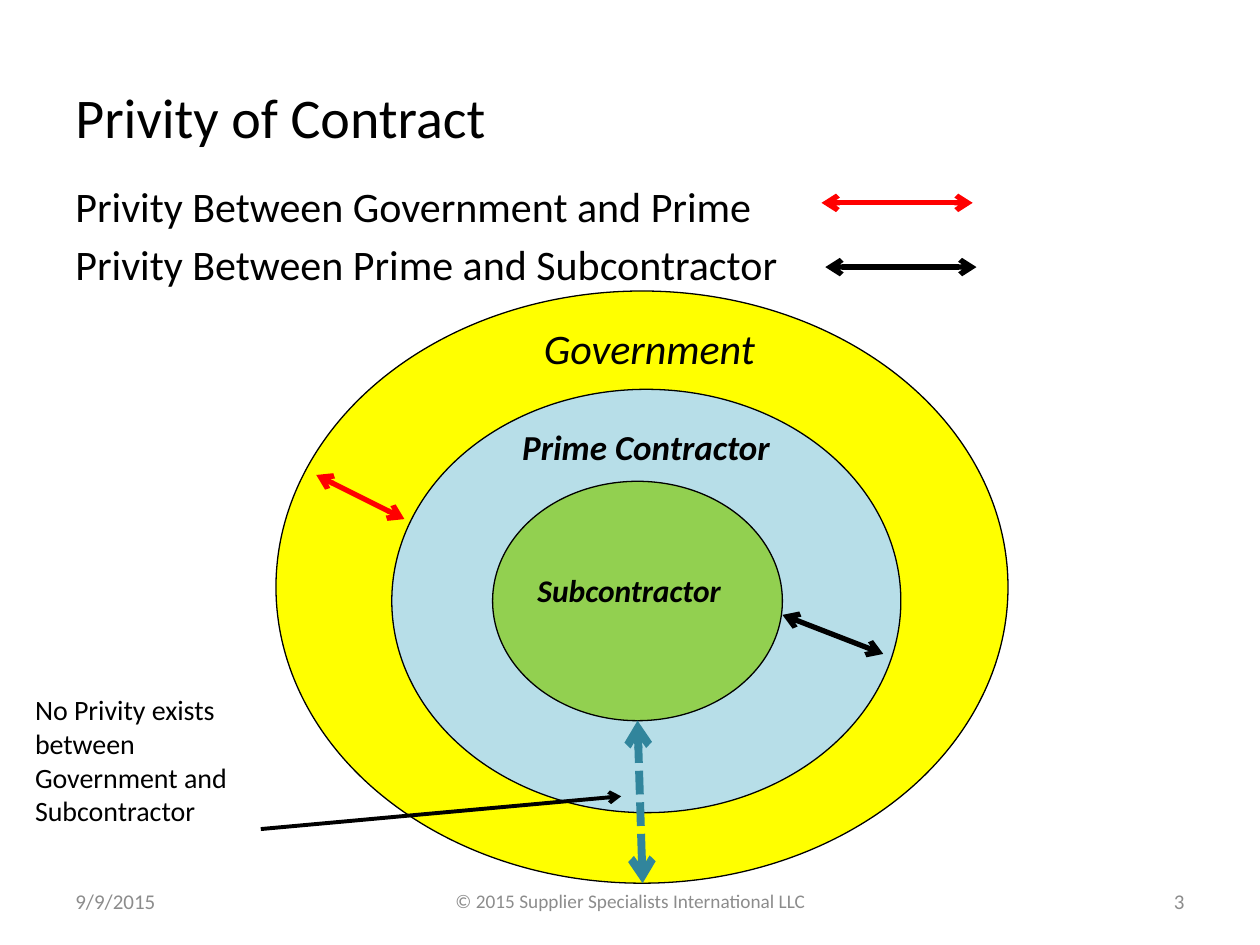
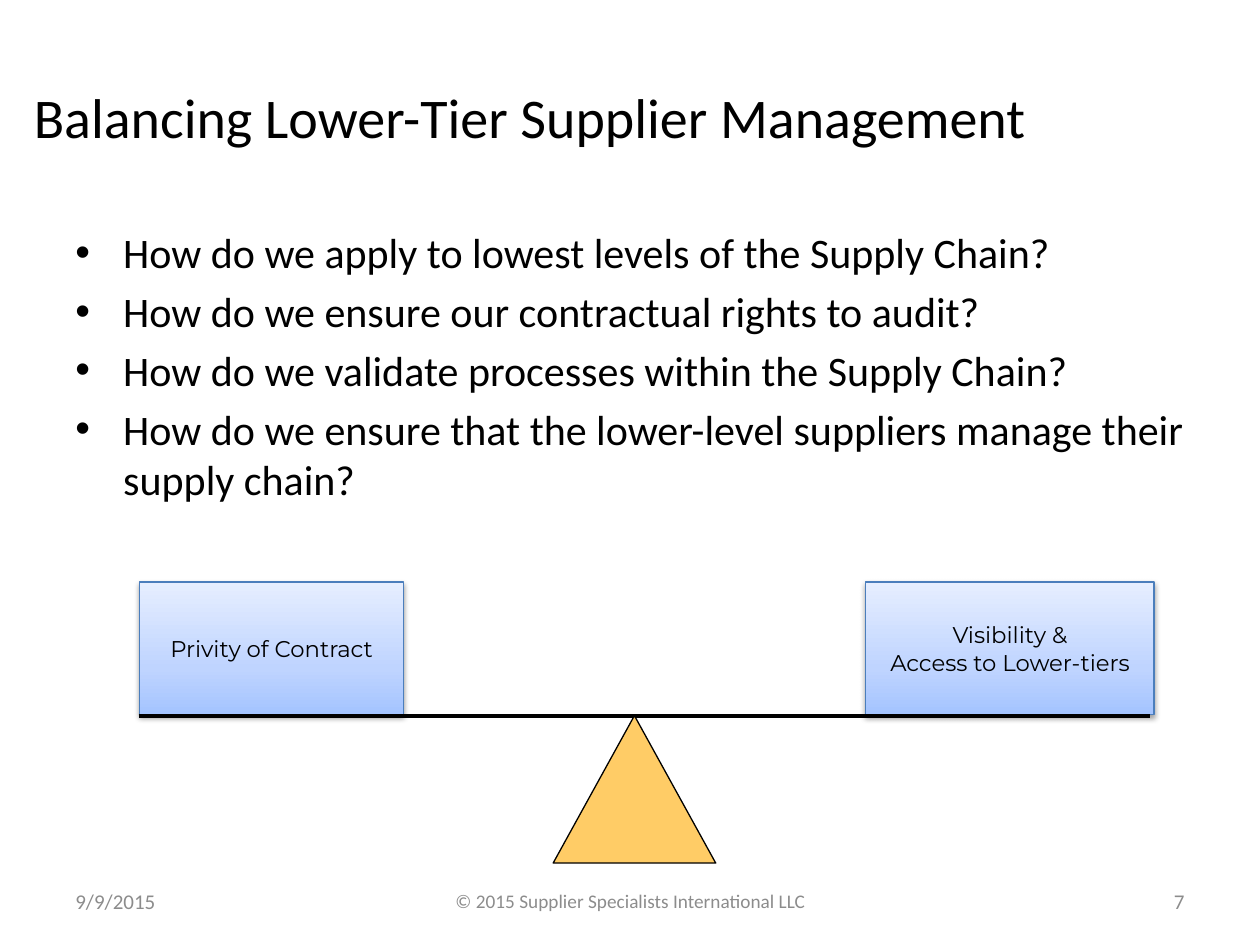
from dataclasses import dataclass

from lxml import etree
from copy import deepcopy
from pptx import Presentation
from pptx.dml.color import RGBColor
from pptx.enum import dml, shapes, text
from pptx.oxml import ns
from pptx.util import Inches, Pt


@dataclass(frozen=True)
class Theme:
    ink: str = "000000"
    muted: str = "8C8C8C"
    government: str = "FFFF00"
    prime: str = "B7DEE8"
    subcontractor: str = "92D050"
    prime_link: str = "FF0000"
    no_link: str = "31859C"
    pivot: str = "FFCC66"
    weight_edge: str = "4B7EBC"
    weight_stops: tuple = ((0, "A4C4FF"), (0.35, "BFD4FF"), (1, "E6EEFF"))
    font: str = "Calibri"
    weight_font: str = "Montserrat"
    title: float = 32
    body: float = 24
    prime_label: float = 20
    sub_label: float = 18
    note: float = 16
    weight: float = 13
    footer: float = 12
    copyright: float = 11
    outline: float = 0.75
    beam: float = 2.25
    arrow: float = 3
    heavy_arrow: float = 4.5


@dataclass(frozen=True)
class Box:
    left: float
    top: float
    width: float
    height: float

    def inner(self, dx, dy, width, height):
        return Box(self.left + dx, self.top + dy, width, height)

    def point(self, dx, dy):
        return self.left + dx, self.top + dy

    def lengths(self):
        return [Inches(v) for v in (self.left, self.top, self.width, self.height)]


THEME = Theme()
ALIGN = text.PP_ALIGN
ANCHOR = text.MSO_ANCHOR
SHAPE = shapes.MSO_SHAPE


def rgb(code):
    return RGBColor.from_string(code)


def add_element(parent, tag, **attributes):
    return etree.SubElement(parent, ns.qn(tag), attributes)


def write(frame, lines, size, color=THEME.ink, font=THEME.font, align=ALIGN.LEFT,
          bold=False, italic=False, gap=0, bullet=False):
    """Fill a text frame with one paragraph per line; gap goes between paragraphs."""
    frame.text = "\n".join(lines)
    for index, para in enumerate(frame.paragraphs):
        para.alignment = align
        para.space_before = Pt(gap if index else 0)
        if bullet:
            properties = para._p.get_or_add_pPr()
            properties.set("marL", str(Inches(0.38)))
            properties.set("indent", str(Inches(-0.38)))
            add_element(properties, "a:buFont", typeface="Arial")
            add_element(properties, "a:buChar", char="•")
        for span in para.runs:
            span.font.name, span.font.size = font, Pt(size)
            span.font.bold, span.font.italic = bold, italic
            span.font.color.rgb = rgb(color)


def add_text(page, box, lines, size, anchor=ANCHOR.TOP, **style):
    frame = page.shapes.add_textbox(*box.lengths()).text_frame
    frame.word_wrap = True
    frame.vertical_anchor = anchor
    write(frame, lines, size, **style)


def add_outlined(page, kind, box, fill, edge=THEME.ink):
    """Add a preset shape; a fill of None is left for the caller to set."""
    shape = page.shapes.add_shape(kind, *box.lengths())
    shape.shadow.inherit = False
    shape.line.color.rgb = rgb(edge)
    shape.line.width = Pt(THEME.outline)
    if fill:
        shape.fill.solid()
        shape.fill.fore_color.rgb = rgb(fill)
    return shape


def add_line(page, start, end, color, width, ends=(), dash=None):
    """Draw a straight line; ends names the ends with an arrowhead: head, tail."""
    points = [Inches(v) for v in (*start, *end)]
    line = page.shapes.add_connector(shapes.MSO_CONNECTOR.STRAIGHT, *points)
    add_element(line._element.spPr, "a:effectLst")
    line.line.color.rgb = rgb(color)
    line.line.width = Pt(width)
    if dash:
        line.line.dash_style = dash
    for name in ends:
        add_element(line.line._get_or_add_ln(), f"a:{name}End", type="arrow")


def add_double_arrow(page, start, end, color, width=THEME.arrow, dash=None):
    add_line(page, start, end, color, width, ("head", "tail"), dash)


def add_title(page, box, title):
    add_text(page, box, [title], THEME.title, ANCHOR.MIDDLE)


def add_body(page, box, lines, bullet=False):
    add_text(page, box, lines, THEME.body, gap=0.2 * THEME.body, bullet=bullet)


def add_footer(page, box, number):
    side = 2.33
    parts = (
        (0, side, "9/9/2015", THEME.footer, ALIGN.LEFT),
        (2.92, 3.17, "© 2015 Supplier Specialists International LLC",
         THEME.copyright, ALIGN.CENTER),
        (box.width - side, side, str(number), THEME.footer, ALIGN.RIGHT),
    )
    for dx, width, line, size, align in parts:
        add_text(page, box.inner(dx, 0, width, box.height), [line], size,
                 ANCHOR.MIDDLE, color=THEME.muted, align=align)


def add_legend(page, box):
    add_body(page, box, ["Privity Between Government and Prime",
                         "Privity Between Prime and Subcontractor"])
    for dx, dy, color in ((6.02, 0.23, THEME.prime_link), (6.05, 0.74, THEME.ink)):
        add_double_arrow(page, box.point(dx, dy), box.point(dx + 1.2, dy), color)


def add_rings(page, box):
    """Three nested parties with the links between them."""
    rings = (
        (box, THEME.government),
        (box.inner(0.92, 0.78, 4.04, 3.36), THEME.prime),
        (box.inner(1.72, 1.51, 2.3, 1.9), THEME.subcontractor),
    )
    labels = (
        (box.inner(1.75, 0.2, 2.15, 0.5), "Government", THEME.body, False),
        (box.inner(1.17, 1.02, 2.85, 0.44), "Prime Contractor", THEME.prime_label, True),
        (box.inner(1.87, 2.17, 1.76, 0.4), "Subcontractor", THEME.sub_label, True),
    )
    for ring, fill in rings:
        add_outlined(page, SHAPE.OVAL, ring, fill)
    for place, label, size, bold in labels:
        add_text(page, place, [label], size, align=ALIGN.RIGHT, bold=bold, italic=True)
    add_double_arrow(page, box.point(0.32, 1.46), box.point(1.02, 1.81), THEME.prime_link)
    add_double_arrow(page, box.point(4.02, 2.57), box.point(4.82, 2.88), THEME.ink)
    add_double_arrow(page, box.point(2.91, 4.7), box.point(2.87, 3.41), THEME.no_link,
                     THEME.heavy_arrow, dml.MSO_LINE.SQUARE_DOT)


def add_no_privity_note(page, box):
    add_text(page, box, ["No Privity exists", "between Government and Subcontractor"],
             THEME.note)
    add_line(page, box.point(1.89, 1.13), box.point(4.75, 0.87), THEME.ink,
             THEME.beam, ("tail",))


def add_weight(page, box, lines):
    """A block on the beam, shaded upwards and with a soft shadow."""
    block = add_outlined(page, SHAPE.RECTANGLE, box, None, THEME.weight_edge)
    block.fill.gradient()
    block.fill.gradient_angle = 90
    stop_list = block._element.spPr.find(".//" + ns.qn("a:gsLst"))
    stop_list.append(deepcopy(stop_list[0]))
    for stop, (position, color) in zip(block.fill.gradient_stops, THEME.weight_stops):
        stop.position = position
        stop.color.rgb = rgb(color)
    effects = block._element.spPr.find(ns.qn("a:effectLst"))
    shadow = add_element(effects, "a:outerShdw", blurRad=str(Pt(3.1)), dist=str(Pt(1.6)),
                         dir="5400000", rotWithShape="0")
    shade = add_element(shadow, "a:srgbClr", val=THEME.ink)
    add_element(shade, "a:alpha", val="38000")
    frame = block.text_frame
    frame.word_wrap = False
    frame.vertical_anchor = ANCHOR.MIDDLE
    frame.margin_left = frame.margin_right = Inches(0.09)
    frame.margin_top = frame.margin_bottom = Inches(0.05)
    write(frame, lines, THEME.weight, font=THEME.weight_font, align=ALIGN.CENTER)


def add_balance(page, box):
    beam = 1.06
    add_weight(page, box.inner(0.01, 0, 2.09, 1.05), ["Privity of Contract"])
    add_weight(page, box.inner(5.77, 0, 2.29, 1.05),
               ["Visibility &", "Access to Lower-tiers"])
    add_line(page, box.point(0, beam), box.point(box.width, beam), THEME.ink, THEME.beam)
    add_outlined(page, SHAPE.ISOSCELES_TRIANGLE,
                 box.inner(3.29, beam, 1.29, box.height - beam), THEME.pivot)


def build_privity(page):
    add_title(page, Box(0.5, 0.3, 6.5, 1.25), "Privity of Contract")
    add_legend(page, Box(0.5, 1.38, 9, 5.5))
    add_rings(page, Box(2.19, 2.31, 5.81, 4.7))
    add_no_privity_note(page, Box(0.18, 5.45, 2.16, 1.18))


def build_balancing(page):
    add_title(page, Box(0.17, 0.3, 8.08, 1.25), "Balancing Lower-Tier Supplier Management")
    add_body(page, Box(0.5, 1.75, 9, 4.95), [
        "How do we apply to lowest levels of the Supply Chain?",
        "How do we ensure our contractual rights to audit?",
        "How do we validate processes within the Supply Chain?",
        "How do we ensure that the lower-level suppliers manage their supply chain?",
    ], bullet=True)
    add_balance(page, Box(1.1, 4.62, 8.03, 2.23))


def main():
    deck = Presentation()
    deck.slide_width, deck.slide_height = Inches(10), Inches(7.5)
    for build, number in ((build_privity, 3), (build_balancing, 7)):
        page = deck.slides.add_slide(deck.slide_layouts[6])
        build(page)
        add_footer(page, Box(0.5, 6.95, 9, 0.4), number)
    deck.save("out.pptx")


if __name__ == "__main__":
    main()
